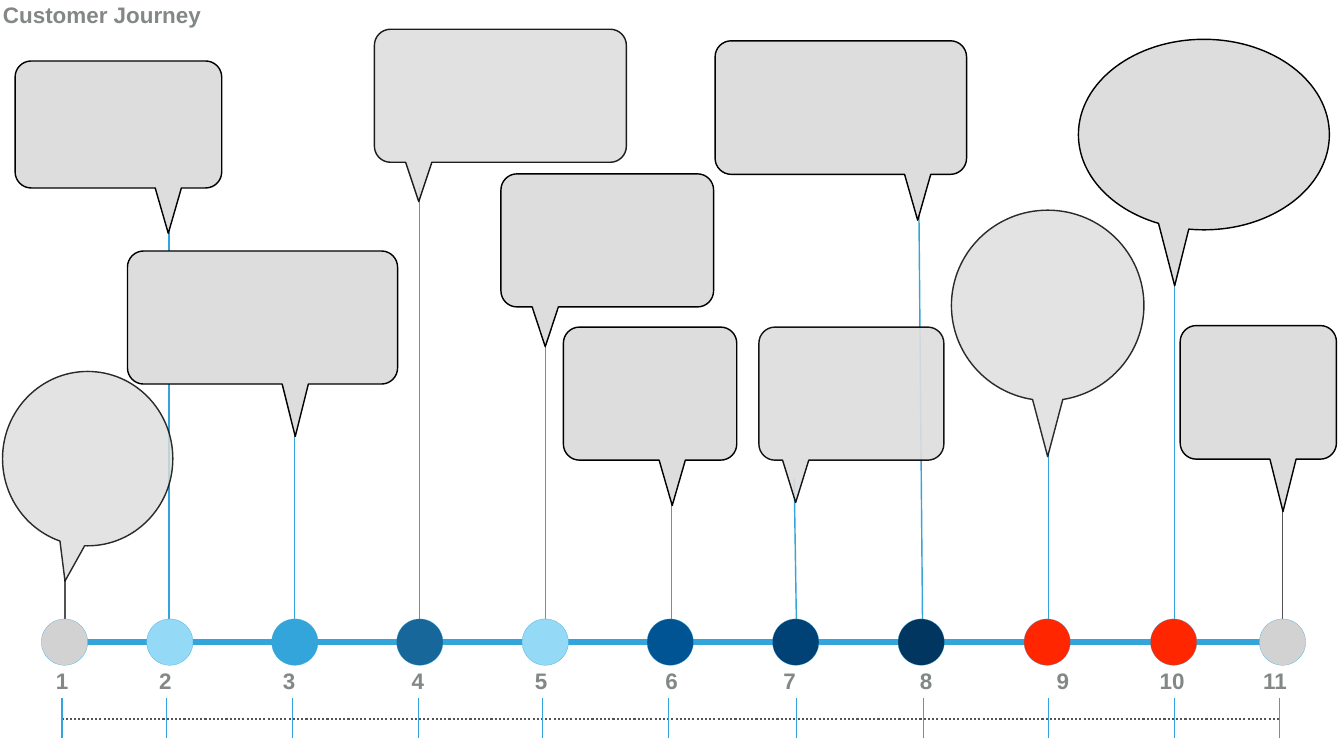
import math

from lxml import etree
from pptx import Presentation
from pptx.dml.color import RGBColor
from pptx.enum.dml import MSO_LINE
from pptx.enum.shapes import MSO_CONNECTOR, MSO_SHAPE
from pptx.enum.text import MSO_ANCHOR
from pptx.oxml.ns import qn
from pptx.util import Inches, Pt

STRAIGHT = MSO_CONNECTOR.STRAIGHT
OVAL = MSO_SHAPE.OVAL
MIDDLE = MSO_ANCHOR.MIDDLE
DOTTED = MSO_LINE.ROUND_DOT

BLUE, GRAY, BLACK = "34A5DA", "535353", "000000"
BUBBLE, LABEL, END_DOT = "DDDDDD", "838787", "D2D2D2"

AXIS_Y = 12.74
DOT_SIZE = 0.92
CORNER = 0.32
TAIL_HALF = 0.26
QUARTER = math.pi / 2

STEMS = [
    (1.29, 1.29, 11.51, GRAY), (25.45, 25.45, 9.64, GRAY),
    (5.84, 5.84, 7.08, BLUE), (8.33, 8.33, 3.71, BLUE),
    (10.83, 10.83, 6.89, BLUE), (3.35, 3.35, 3.93, BLUE),
    (13.33, 13.33, 9.64, BLUE), (15.81, 15.76, 9.5, BLUE),
    (18.31, 18.23, 3.57, BLUE), (20.81, 20.81, 8.98, BLUE),
    (23.31, 23.31, 5.39, BLUE),
]
STAGES = [
    (1.28, END_DOT), (3.37, "94D9F6"), (5.85, "34A5DA"), (8.33, "18679A"),
    (10.82, "94D9F6"), (13.3, "005493"), (15.79, "004275"), (18.28, "00365F"),
    (20.78, "FF2600"), (23.29, "FF2600"), (25.45, END_DOT),
]
TICKS = [3.31, 5.81, 8.31, 10.76, 13.27, 15.81, 18.33, 20.81, 23.31]
END_TICKS = [1.23, 25.39]
LABEL_CENTERS = [3.28, 5.74, 8.29, 10.74, 13.33, 15.67, 18.38, 21.09, 23.26, 25.3]
BOXES = [
    (0.3, 1.21, 4.4, 3.73, (3.34, 4.63), 100),
    (2.53, 4.98, 7.89, 7.62, (5.86, 8.66), 100),
    (7.43, 0.58, 12.43, 3.22, (8.31, 4), 88),
    (9.94, 3.45, 14.16, 6.09, (10.82, 6.88), 100),
    (11.18, 6.49, 14.62, 9.13, (13.34, 10.03), 100),
    (15.06, 6.49, 18.73, 9.13, (15.79, 9.97), 91),
    (14.19, 0.81, 19.18, 3.46, (18.21, 4.37), 100),
    (23.42, 6.46, 26.52, 9.11, (25.46, 10.15), 100),
]
OVALS = [
    (20.79, 6.06, 1.91, 1.89, (20.49, 21.09), (20.79, 9.06), 82),
    (23.89, 2.67, 2.49, 1.89, (22.99, 23.59), (23.31, 5.67), 100),
    (1.74, 9.1, 1.69, 1.73, (1.19, 1.68), (1.29, 11.53), 82),
]


def color(value):
    return RGBColor.from_string(value)


def apply_format(target, values):
    for name, value in values.items():
        setattr(target, name, value)


def curve(center_x, center_y, radius_x, radius_y, start, end):
    pull = 4 / 3 * math.tan((end - start) / 4)
    units = [
        (math.cos(start), math.sin(start)),
        (math.cos(start) - pull * math.sin(start), math.sin(start) + pull * math.cos(start)),
        (math.cos(end) + pull * math.sin(end), math.sin(end) - pull * math.cos(end)),
        (math.cos(end), math.sin(end)),
    ]
    return [(center_x + radius_x * x, center_y + radius_y * y) for x, y in units]


class JourneySlide:
    font_format = {"name": "Arial", "size": Pt(32), "bold": True}
    frame_format = {"vertical_anchor": MIDDLE, "word_wrap": True,
                    **{f"margin_{side}": Inches(0.06)
                       for side in ("left", "top", "right", "bottom")}}

    def __init__(self, presentation):
        self.slide = presentation.slides.add_slide(presentation.slide_layouts[6])
        self.shapes = self.slide.shapes

    def line(self, x1, y1, x2, y2, line_color, width, dash=None):
        connector = self.shapes.add_connector(
            STRAIGHT, Inches(x1), Inches(y1), Inches(x2), Inches(y2))
        connector.line.color.rgb = color(line_color)
        apply_format(connector.line, {"width": Pt(width), "dash_style": dash})
        etree.SubElement(connector._element.spPr, qn("a:effectLst"))

    def paint(self, shape, fill_color, line_color, width, opacity=100):
        shape.shadow.inherit = False
        shape.fill.solid()
        shape.fill.fore_color.rgb = color(fill_color)
        shape.line.color.rgb = color(line_color)
        shape.line.width = Pt(width)
        if opacity < 100:
            for element in shape._element.spPr.iter(qn("a:srgbClr")):
                etree.SubElement(element, qn("a:alpha"), val=str(opacity * 1000))

    def dot(self, center_x, fill_color):
        shape = self.shapes.add_shape(
            OVAL, Inches(center_x - DOT_SIZE / 2), Inches(AXIS_Y - DOT_SIZE / 2),
            Inches(DOT_SIZE), Inches(DOT_SIZE))
        self.paint(shape, fill_color, BLUE, 0.25)

    def outline(self, start, segments, opacity):
        points = [(Inches(x), Inches(y)) for segment in segments for x, y in segment]
        builder = self.shapes.build_freeform(Inches(start[0]), Inches(start[1]))
        builder.add_line_segments(points, close=True)
        shape = builder.convert_to_shape()
        steps = list(shape._element.spPr.iter(qn("a:lnTo")))
        for segment in segments:
            first, *others = [steps.pop(0) for _ in segment]
            if others:
                first.tag = qn("a:cubicBezTo")
            for step in others:
                first.append(step[0])
                step.getparent().remove(step)
        self.paint(shape, BUBBLE, BLACK, 2, opacity)

    def box_callout(self, left, top, right, bottom, tip, opacity):
        corners = [(right - CORNER, bottom - CORNER), (left + CORNER, bottom - CORNER),
                   (left + CORNER, top + CORNER), (right - CORNER, top + CORNER)]
        curves = [curve(x, y, CORNER, CORNER, i * QUARTER, (i + 1) * QUARTER)
                  for i, (x, y) in enumerate(corners)]
        segments = [curves[0][1:], [(tip[0] + TAIL_HALF, bottom)], [tip],
                    [(tip[0] - TAIL_HALF, bottom)]]
        for corner in curves[1:]:
            segments += [corner[:1], corner[1:]]
        self.outline(curves[0][0], segments, opacity)

    def oval_callout(self, center_x, center_y, radius_x, radius_y, base, tip, opacity):
        start, end = [math.acos((x - center_x) / radius_x) for x in base]
        end += 2 * math.pi
        stops = [start, *[i * QUARTER for i in range(6) if start < i * QUARTER < end], end]
        curves = [curve(center_x, center_y, radius_x, radius_y, *pair)
                  for pair in zip(stops, stops[1:])]
        self.outline(curves[0][0], [arc[1:] for arc in curves] + [[tip]], opacity)

    def text(self, left, top, width, height, words, tab_centers=()):
        box = self.shapes.add_textbox(
            Inches(left), Inches(top), Inches(width), Inches(height))
        apply_format(box.text_frame, self.frame_format)
        paragraph = box.text_frame.paragraphs[0]
        run = paragraph.add_run()
        run.text = words
        apply_format(run.font, self.font_format)
        run.font.color.rgb = color(LABEL)
        if tab_centers:
            properties = paragraph._p.get_or_add_pPr()
            tab_list = etree.SubElement(properties, qn("a:tabLst"))
            for center in tab_centers:
                position = Inches(center - left - 0.06)
                etree.SubElement(tab_list, qn("a:tab"), pos=str(position), algn="ctr")


def main():
    presentation = Presentation()
    apply_format(presentation, {"slide_width": Inches(26.67), "slide_height": Inches(15)})
    journey = JourneySlide(presentation)

    for bottom_x, top_x, top, stem_color in STEMS:
        journey.line(bottom_x, AXIS_Y, top_x, top, stem_color, 2)
    journey.text(0, -0.03, 4.1, 0.64, "Customer Journey")
    journey.line(1.57, AXIS_Y, 25.09, AXIS_Y, BLUE, 8)
    for center_x, fill_color in STAGES:
        journey.dot(center_x, fill_color)
    for box in BOXES:
        journey.box_callout(*box)
    for oval in OVALS:
        journey.oval_callout(*oval)

    journey.line(1.22, 14.26, 25.38, 14.26, GRAY, 3, DOTTED)
    for positions, width in ((TICKS, 1), (END_TICKS, 2)):
        for x in positions:
            journey.line(x, 14.65, x, 13.84, BLUE, width)
    numbers = "\t".join(str(i + 1) for i in range(len(STAGES)))
    journey.text(1.05, 13.18, 24.6, 0.64, numbers, LABEL_CENTERS)

    presentation.save("out.pptx")


if __name__ == "__main__":
    main()
